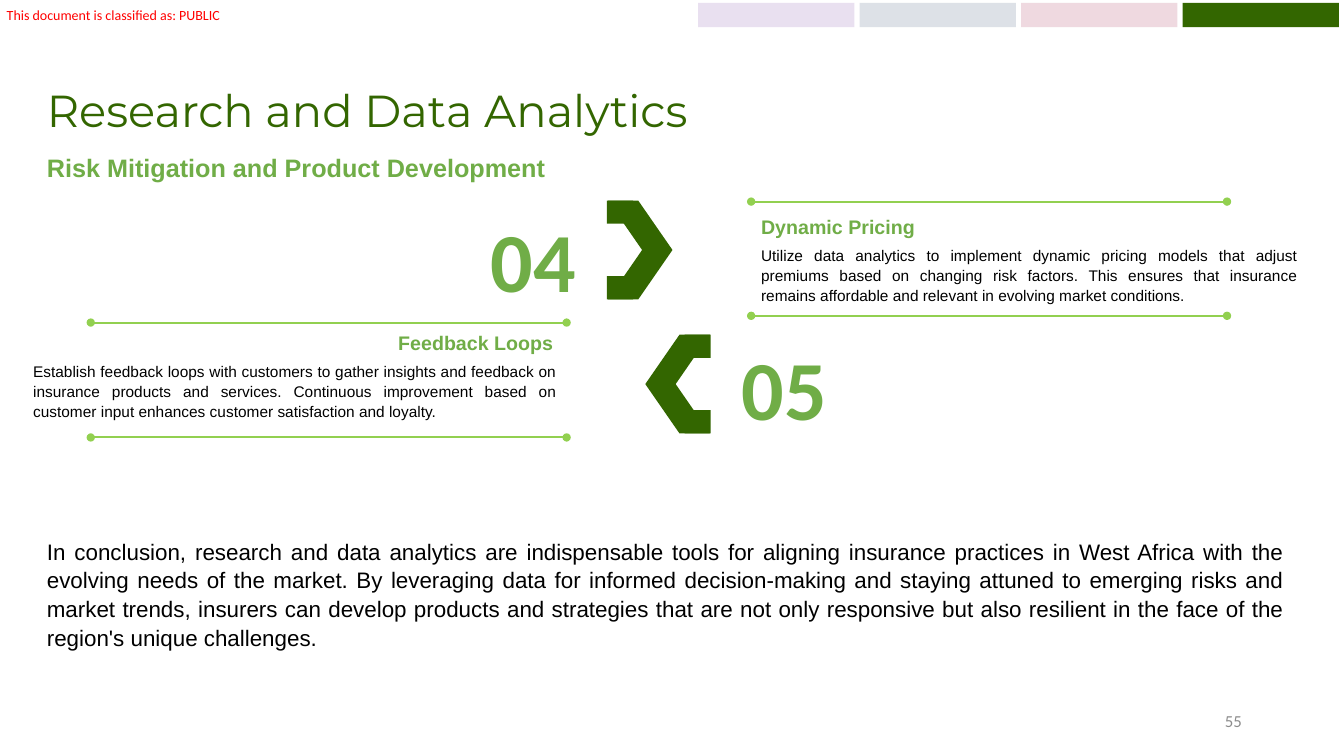
from dataclasses import dataclass

from lxml import etree
from pptx import Presentation
from pptx.dml.color import RGBColor
from pptx.enum.shapes import MSO_CONNECTOR, MSO_SHAPE
from pptx.enum.text import MSO_ANCHOR, PP_ALIGN
from pptx.oxml.ns import qn
from pptx.util import Inches, Pt

STRAIGHT = MSO_CONNECTOR.STRAIGHT
CHEVRON, RECTANGLE = MSO_SHAPE.CHEVRON, MSO_SHAPE.RECTANGLE
TOP, MIDDLE = MSO_ANCHOR.TOP, MSO_ANCHOR.MIDDLE
LEFT, CENTER, RIGHT, JUSTIFY = PP_ALIGN.LEFT, PP_ALIGN.CENTER, PP_ALIGN.RIGHT, PP_ALIGN.JUSTIFY

# The slide is a grid of 40 columns by 22.5 rows of square cells
WIDTH, HEIGHT = Inches(13.33), Inches(7.5)
CELL = HEIGHT / 22.5


@dataclass(frozen=True)
class Style:
    size: float
    font: str
    color: str
    bold: bool = False


class Theme:
    dark_green = "336600"
    line_green = "92D050"
    line_width = 1.5
    tab_opacity = 15
    tabs = (("7030A0", True), ("203864", True), ("990033", True), (dark_green, False))
    tag = Style(10, "Calibri", "FF0000")
    title = Style(32, "Montserrat", dark_green)
    subtitle = Style(18, "Arial", "70AD47", True)
    heading = Style(14, "Arial", "70AD47", True)
    number = Style(60, "Calibri", "70AD47", True)
    body = Style(11, "Arial", "000000")
    conclusion = Style(16, "Arial", "000000")
    page = Style(12, "Calibri", "8C8C8C")


@dataclass(frozen=True)
class Box:
    """A region in grid cells."""
    left: float
    top: float
    width: float
    height: float

    @property
    def right(self):
        return self.left + self.width

    @property
    def bottom(self):
        return self.top + self.height

    def lengths(self):
        return [cells(n) for n in (self.left, self.top, self.width, self.height)]


def cells(count):
    return round(count * CELL)


def add_text(slide, box, text, style, align=LEFT, anchor=TOP, spacing=None, after=0, inset=None):
    frame = slide.shapes.add_textbox(*box.lengths()).text_frame
    frame.word_wrap = True
    frame.vertical_anchor = anchor
    if inset is not None:
        frame.margin_left = frame.margin_right = inset
        frame.margin_top = frame.margin_bottom = inset
    paragraph = frame.paragraphs[0]
    paragraph.text = text
    paragraph.alignment = align
    paragraph.space_after = Pt(after)
    if spacing:
        paragraph.line_spacing = spacing
    font = paragraph.font
    font.name, font.size, font.bold = style.font, Pt(style.size), style.bold
    font.color.rgb = RGBColor.from_string(style.color)


def add_filled(slide, kind, box, color, opacity=None):
    shape = slide.shapes.add_shape(kind, *box.lengths())
    shape.shadow.inherit = False
    shape.fill.solid()
    shape.fill.fore_color.rgb = RGBColor.from_string(color)
    shape.line.fill.background()
    if opacity:
        color_element = shape.fill._xPr.find(qn("a:solidFill"))[0]
        etree.SubElement(color_element, qn("a:alpha"), val=str(opacity * 1000))
    return shape


def add_rule(slide, left, right, top):
    """Horizontal line with a dot at each end."""
    rule = slide.shapes.add_connector(STRAIGHT, cells(left), cells(top), cells(right), cells(top))
    rule.line.width = Pt(Theme.line_width)
    rule.line.color.rgb = RGBColor.from_string(Theme.line_green)
    line_element = rule.line._get_or_add_ln()
    for end in ("a:headEnd", "a:tailEnd"):
        etree.SubElement(line_element, qn(end), type="oval")
    etree.SubElement(rule._element.spPr, qn("a:effectLst"))


def add_tabs(slide, box, gap=0.15):
    """Section tabs, equally spaced across the box."""
    width = (box.width + gap) / len(Theme.tabs) - gap
    for index, (color, faded) in enumerate(Theme.tabs):
        tab = Box(box.left + index * (width + gap), box.top, width, box.height)
        add_filled(slide, RECTANGLE, tab, color, Theme.tab_opacity if faded else None)


def add_header(slide, box):
    add_text(slide, Box(box.left, box.top, box.width, 4.35), "Research and Data Analytics",
             Theme.title, anchor=MIDDLE, spacing=0.9)
    add_text(slide, Box(box.left, box.top + 3.12, 27.1, 1.2),
             "Risk Mitigation and Product Development", Theme.subtitle, spacing=1.07, after=8)


def add_marker(slide, box, number, points_right, number_shift):
    """Squared-off chevron with its number on the open side."""
    chevron_width, block_width, block_height = 1.92, 0.78, 0.69
    number_width, number_gap = 3.42, 0.48
    if points_right:
        chevron_left, block_left = box.right - chevron_width, box.left
        number_left = box.left - number_gap - number_width
    else:
        chevron_left, block_left = box.left, box.right - block_width
        number_left = box.right + number_gap
    chevron = add_filled(slide, CHEVRON, Box(chevron_left, box.top, chevron_width, box.height),
                         Theme.dark_green)
    chevron.adjustments[0] = 0.53
    chevron.rotation = 0 if points_right else 180
    for top in (box.top, box.bottom - block_height):
        add_filled(slide, RECTANGLE, Box(block_left, top, block_width, block_height),
                   Theme.dark_green)
    add_text(slide, Box(number_left, box.top + number_shift, number_width, 3.33), number,
             Theme.number, CENTER)


def add_step(slide, box, heading, body, on_right, text_width, text_drop):
    """Heading and body between two rules; the text reaches to the outer side."""
    left = box.left if on_right else box.right - text_width
    top = box.top + text_drop
    add_text(slide, Box(left, top + 0.9, text_width, 2.07), body, Theme.body,
             JUSTIFY, spacing=1.07, after=8)
    add_text(slide, Box(left, top, text_width - 0.1, 1.02), heading, Theme.heading,
             LEFT if on_right else RIGHT)
    for rule_top in (box.top, box.bottom):
        add_rule(slide, box.left, box.right, rule_top)


def main():
    presentation = Presentation()
    presentation.slide_width, presentation.slide_height = WIDTH, HEIGHT
    slide = presentation.slides.add_slide(presentation.slide_layouts[6])

    # Classification, title and subtitle
    add_text(slide, Box(0.2, 0.2, 6.45, 0.5), "This document is classified as: PUBLIC",
             Theme.tag, inset=0)
    add_header(slide, Box(1.1, 1.2, 37.8, 4.35))

    # Numbered chevrons and their steps
    add_marker(slide, Box(18.06, 5.97, 1.95, 2.94), "04", True, 0.09)
    add_marker(slide, Box(19.2, 9.96, 1.95, 2.94), "05", False, -0.09)
    add_step(slide, Box(22.35, 6, 14.16, 3.4), "Dynamic Pricing",
             "Utilize data analytics to implement dynamic pricing models that adjust premiums "
             "based on changing risk factors. This ensures that insurance remains affordable "
             "and relevant in evolving market conditions.", True, 16.56, 0.25)
    add_step(slide, Box(2.7, 9.6, 14.16, 3.42), "Feedback Loops",
             "Establish feedback loops with customers to gather insights and feedback on "
             "insurance products and services. Continuous improvement based on customer input "
             "enhances customer satisfaction and loyalty.", False, 16.17, 0.1)

    # Conclusion and page number
    add_text(slide, Box(1.1, 15.8, 37.4, 3.7),
             "In conclusion, research and data analytics are indispensable tools for aligning "
             "insurance practices in West Africa with the evolving needs of the market. By "
             "leveraging data for informed decision-making and staying attuned to emerging risks "
             "and market trends, insurers can develop products and strategies that are not only "
             "responsive but also resilient in the face of the region's unique challenges.",
             Theme.conclusion, JUSTIFY, spacing=1.07, after=8)
    add_text(slide, Box(28.25, 20.85, 9, 1.2), "55", Theme.page, RIGHT, MIDDLE)

    # Section tabs
    add_tabs(slide, Box(20.77, 0.09, 19.07, 0.72))
    presentation.save("out.pptx")


if __name__ == "__main__":
    main()
